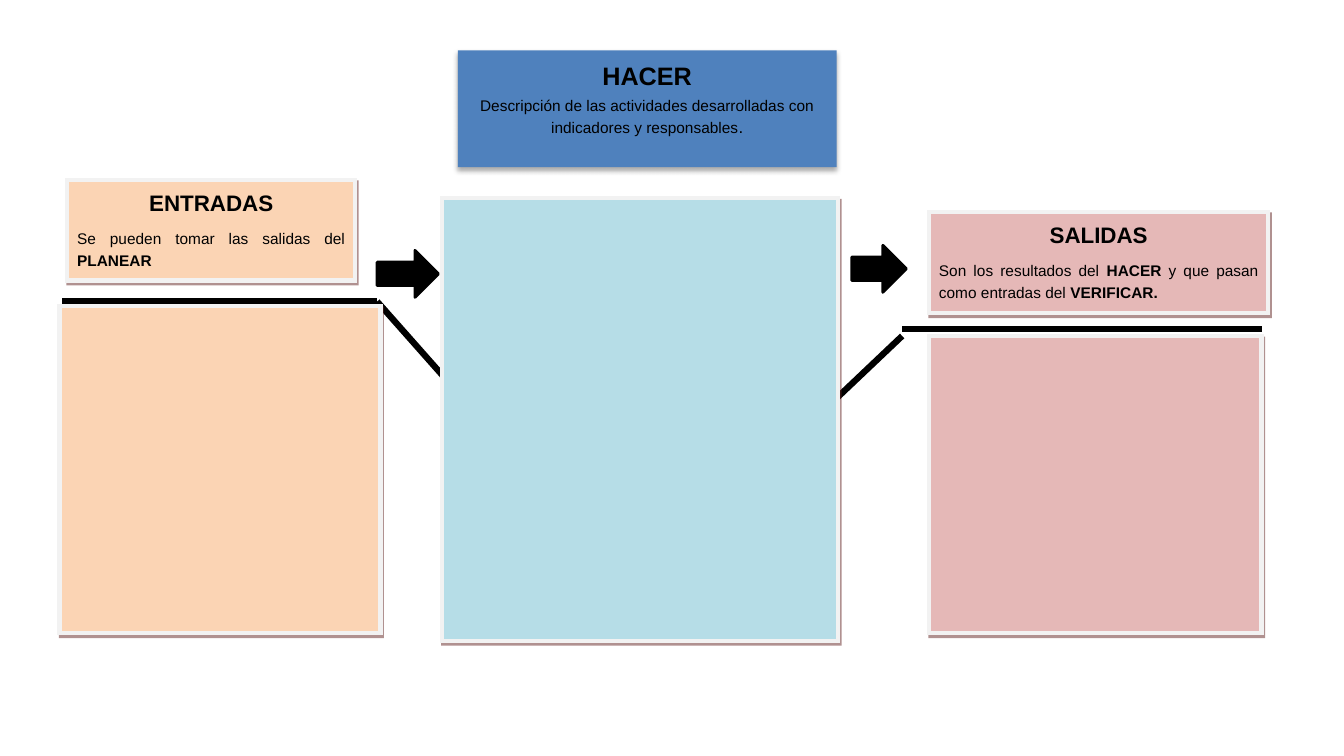
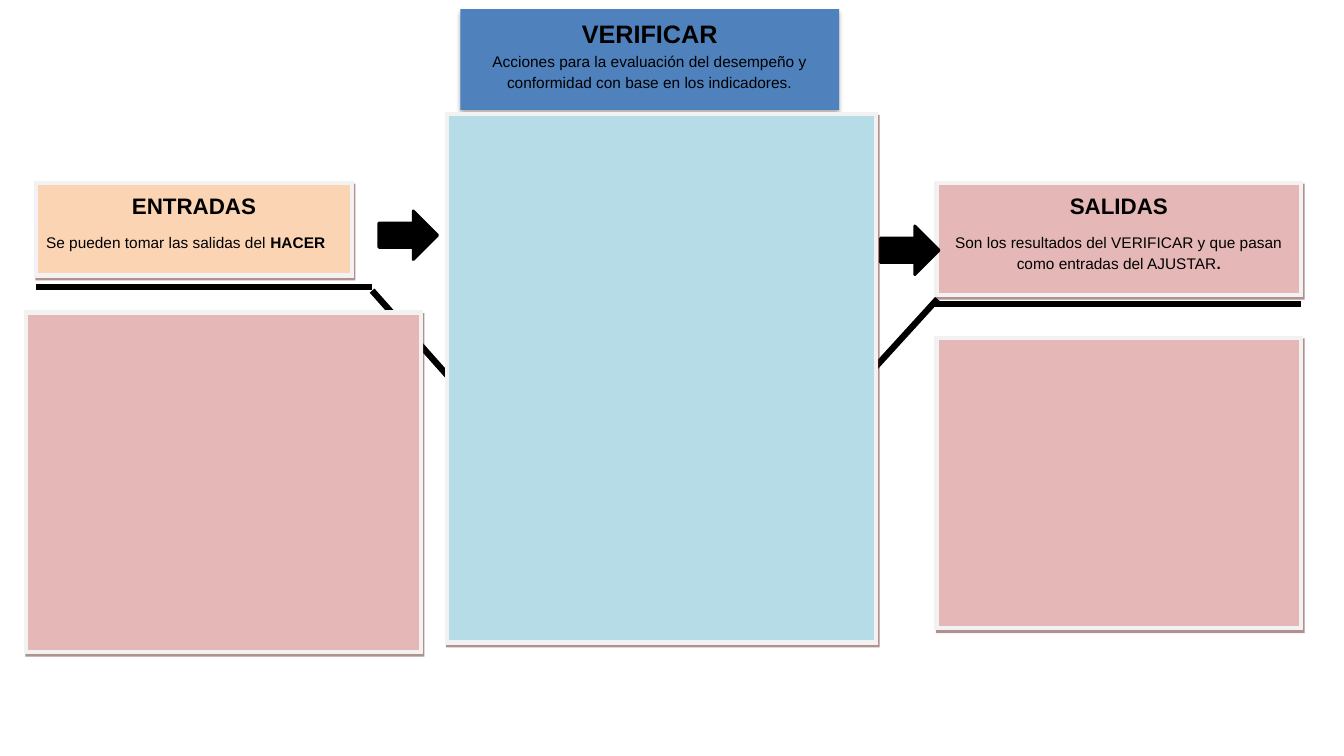
from pptx import Presentation
from pptx.dml.color import RGBColor
from pptx.enum.shapes import MSO_CONNECTOR as Connector, MSO_SHAPE as Preset
from pptx.enum.text import MSO_ANCHOR as Anchor, PP_ALIGN as Align
from pptx.oxml.ns import qn
from pptx.oxml.xmlchemy import OxmlElement
from pptx.util import Inches, Pt

BLACK = RGBColor(0x00, 0x00, 0x00)
FRAME = RGBColor(0xF2, 0xF2, 0xF2)
BLUE = RGBColor(0x4F, 0x81, 0xBD)
PEACH = RGBColor(0xFB, 0xD4, 0xB4)
ROSE = RGBColor(0xE5, 0xB8, 0xB7)
AQUA = RGBColor(0xB6, 0xDD, 0xE7)
BROWN = RGBColor(0x63, 0x24, 0x23)

COLUMNS, ROWS = 160, 90


class CycleDeck:
    """Draws process-cycle slides on a grid of 160 columns by 90 rows."""

    font = "Arial"
    body_size = 11
    leading = 1.15
    frame_width = 3
    rule_width = 4.5

    def __init__(self):
        self.deck = Presentation()
        self.deck.slide_width = Inches(13.33)
        self.deck.slide_height = Inches(7.5)
        self.page = None

    def add_page(self):
        self.page = self.deck.slides.add_slide(self.deck.slide_layouts[6])

    def place(self, column, row):
        return (round(self.deck.slide_width * column / COLUMNS),
                round(self.deck.slide_height * row / ROWS))

    def shape(self, preset, area, fill):
        column, row, width, height = area
        box = self.page.shapes.add_shape(
            preset, *self.place(column, row), *self.place(width, height))
        box.shadow.inherit = False
        box.fill.solid()
        box.fill.fore_color.rgb = fill
        return box

    def cast_shadow(self, box, color, opacity, blur, angle):
        shadow = OxmlElement("a:outerShdw")
        settings = {"blurRad": Pt(blur), "dist": Pt(2.2),
                    "dir": angle * 60000, "algn": "ctr", "rotWithShape": 0}
        for name, value in settings.items():
            shadow.set(name, str(value))
        tint = OxmlElement("a:srgbClr")
        tint.set("val", str(color))
        alpha = OxmlElement("a:alpha")
        alpha.set("val", str(opacity * 1000))
        tint.append(alpha)
        shadow.append(tint)
        box.element.spPr.find(qn("a:effectLst")).append(shadow)

    def panel(self, area, fill):
        box = self.shape(Preset.RECTANGLE, area, fill)
        box.line.color.rgb = FRAME
        box.line.width = Pt(self.frame_width)
        corner = OxmlElement("a:miter")
        corner.set("lim", "800000")
        box.element.spPr.find(qn("a:ln")).append(corner)
        self.cast_shadow(box, BROWN, 49, 0, 63)
        return box

    def add_text(self, box, title, title_size, spans, align, gap):
        frame = box.text_frame
        frame.word_wrap = True
        frame.vertical_anchor = Anchor.TOP
        heading = frame.paragraphs[0]
        heading.text = title
        body = frame.add_paragraph()
        body.space_before = Pt(gap)
        for text, bold, size in spans:
            span = body.add_run()
            span.text = text
            span.font.bold = bold
            span.font.size = Pt(size)
        for para, size, side in ((heading, title_size, Align.CENTER),
                                 (body, self.body_size, align)):
            para.alignment = side
            para.line_spacing = self.leading
            para.font.name = self.font
            para.font.size = Pt(size)
            para.font.color.rgb = BLACK
        heading.font.bold = True

    def header(self, area, fill, title, spans, align=Align.JUSTIFY):
        sized = [(text, bold, self.body_size) for text, bold in spans]
        self.add_text(self.panel(area, fill), title, 16, sized, align, 8)

    def banner(self, area, title, spans, gap):
        box = self.shape(Preset.RECTANGLE, area, BLUE)
        box.line.fill.background()
        self.cast_shadow(box, BLACK, 32, 3.5, 90)
        self.add_text(box, title, 18, spans, Align.CENTER, gap)

    def rule(self, start, end):
        line = self.page.shapes.add_connector(
            Connector.STRAIGHT, *self.place(*start), *self.place(*end))
        line.line.color.rgb = BLACK
        line.line.width = Pt(self.rule_width)
        line.element.spPr.append(OxmlElement("a:effectLst"))

    def arrow(self, area):
        box = self.shape(Preset.RIGHT_ARROW, area, BLACK)
        box.line.color.rgb = BLACK
        box.line.width = Pt(2)

    def flow(self, rules, arrows, panels):
        for start, end in rules:
            self.rule(start, end)
        for area in arrows:
            self.arrow(area)
        for area, fill in panels:
            self.panel(area, fill)


def add_do_page(cycle):
    cycle.add_page()
    cycle.header((8, 21.4, 34.3, 12), PEACH, "ENTRADAS",
                 [("Se pueden tomar las salidas del ", False), ("PLANEAR", True)])
    cycle.header((110.6, 25.2, 40.4, 12.1), ROSE, "SALIDAS",
                 [("Son los resultados del ", False), ("HACER ", True),
                  ("y que pasan como entradas del ", False), ("VERIFICAR.", True)])
    cycle.banner((54.5, 6, 45.1, 13.9), "HACER",
                 [("Descripción de las actividades desarrolladas con "
                   "indicadores y responsables", False, 11), (".", False, 12)], 2)
    cycle.flow(
        rules=[((76.1, 69.7), (107.4, 40)), ((44.9, 35.9), (75.8, 70.8)),
               ((7.4, 35.8), (44.9, 35.8)), ((107.4, 39.2), (150.2, 39.2))],
        arrows=[(44.9, 29.8, 7.3, 5.6), (101.4, 29.2, 6.5, 5.6)],
        panels=[((7.1, 36.4, 38.2, 39), PEACH),
                ((52.6, 23.6, 47.2, 52.7), AQUA),
                ((110.6, 40, 39.6, 35.4), ROSE)])


def add_check_page(cycle):
    cycle.add_page()
    cycle.header((4.3, 21.8, 37.6, 11), PEACH, "ENTRADAS",
                 [("Se pueden tomar las salidas del ", False), ("HACER", True)])
    cycle.header((111.5, 21.8, 43.4, 13.3), ROSE, "SALIDAS",
                 [("Son los resultados del VERIFICAR y que pasan como "
                   "entradas del AJUSTAR", False), (".", True)], Align.CENTER)
    cycle.banner((54.8, 1.1, 45.1, 12), "VERIFICAR",
                 [("Acciones para la evaluación del desempeño y conformidad "
                   "con base en los indicadores.", False, 11)], 0)
    cycle.flow(
        rules=[((77.5, 73), (111.6, 35.6)), ((44.3, 34.6), (77.4, 71.9)),
               ((4.3, 34.2), (44.3, 34.2)), ((111.2, 36.2), (154.9, 36.2))],
        arrows=[(45.1, 25.1, 7, 5.8), (104.8, 26.9, 7, 5.8)],
        panels=[((53.2, 13.6, 51.1, 62.9), AQUA),
                ((111.5, 40.2, 43.4, 34.6), ROSE),
                ((3.1, 37.2, 47, 40.4), ROSE)])


def main():
    cycle = CycleDeck()
    add_do_page(cycle)
    add_check_page(cycle)
    cycle.deck.save("out.pptx")


if __name__ == "__main__":
    main()
